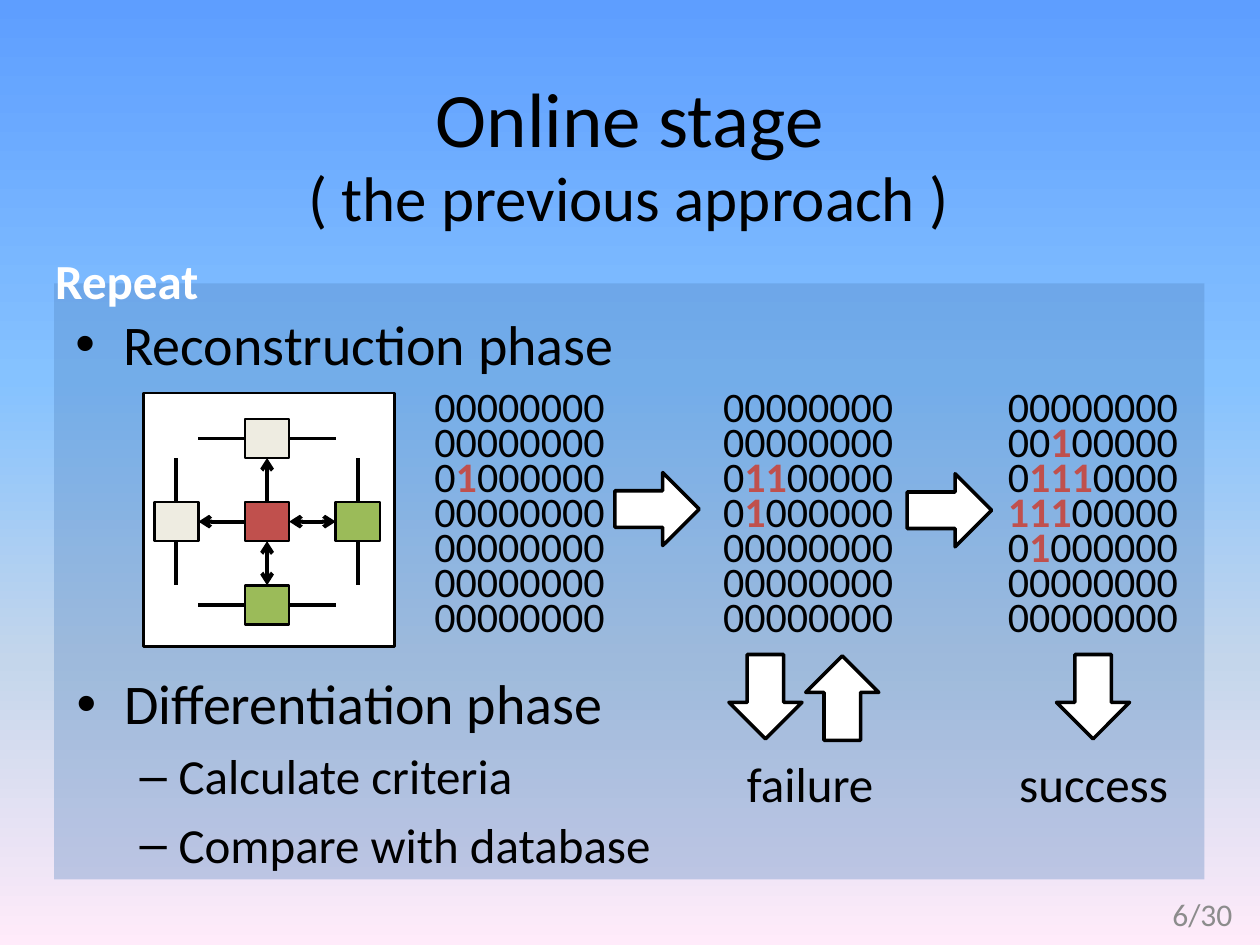
from copy import deepcopy
from itertools import groupby

from pptx import Presentation
from pptx.dml.color import RGBColor
from pptx.enum.shapes import MSO_CONNECTOR, MSO_SHAPE
from pptx.enum.text import MSO_ANCHOR, PP_ALIGN
from pptx.oxml.ns import qn
from pptx.oxml.xmlchemy import OxmlElement
from pptx.util import Inches, Pt

FONT = "Calibri"
BLACK = RGBColor(0x00, 0x00, 0x00)
WHITE = RGBColor(0xFF, 0xFF, 0xFF)
GRAY = RGBColor(0x8C, 0x8C, 0x8C)
RED = RGBColor(0xC0, 0x50, 0x4D)
GREEN = RGBColor(0x9B, 0xBB, 0x59)
CREAM = RGBColor(0xEE, 0xEC, 0xE1)
PANEL_BLUE = RGBColor(0x4F, 0x81, 0xBD)
SKY = [(0, RGBColor(0x5E, 0x9E, 0xFF)), (0.4, RGBColor(0x85, 0xC2, 0xFF)),
       (0.7, RGBColor(0xC4, 0xD6, 0xEB)), (1, RGBColor(0xFF, 0xEB, 0xFA))]


def add_child(parent, tag, **attributes):
    element = OxmlElement(tag)
    for name, value in attributes.items():
        element.set(name, str(value))
    parent.append(element)
    return element


def add_run(paragraph, text, size, color=BLACK, bold=False):
    run = paragraph.add_run()
    run.text = text
    run.font.name = FONT
    run.font.size = Pt(size)
    run.font.bold = bold
    run.font.color.rgb = color


def add_text_frame(slide, box, anchor=MSO_ANCHOR.TOP):
    frame = slide.shapes.add_textbox(*map(Inches, box)).text_frame
    frame.word_wrap = True
    frame.vertical_anchor = anchor
    return frame


def add_label(slide, box, text, size, color=BLACK, bold=False,
              align=PP_ALIGN.LEFT, anchor=MSO_ANCHOR.TOP):
    paragraph = add_text_frame(slide, box, anchor).paragraphs[0]
    paragraph.alignment = align
    add_run(paragraph, text, size, color, bold)


def add_box(shapes, kind, box, fill, line_width=None):
    shape = shapes.add_shape(kind, *map(Inches, box))
    shape.shadow.inherit = False
    shape.fill.solid()
    shape.fill.fore_color.rgb = fill
    if line_width:
        shape.line.color.rgb = BLACK
        shape.line.width = Pt(line_width)
    else:
        shape.line.fill.background()
    return shape


def add_line(shapes, start, end, heads=()):
    line = shapes.add_connector(MSO_CONNECTOR.STRAIGHT,
                                *map(Inches, (*start, *end)))
    line.line.color.rgb = BLACK
    line.line.width = Pt(2.25)
    for head in heads:
        add_child(line.line._get_or_add_ln(), head, type="arrow")
    add_child(line._element.spPr, "a:effectLst")


def paint_background(slide):
    fill = slide.background.fill
    fill.gradient()
    fill.gradient_angle = 270
    stop_list = slide.element.find(".//" + qn("a:gsLst"))
    for _ in range(len(SKY) - len(stop_list)):
        stop_list.append(deepcopy(stop_list[0]))
    for stop, (position, color) in zip(fill.gradient_stops, SKY):
        stop.position = position
        stop.color.rgb = color


def add_heading(slide, title_box, subtitle_box):
    title = slide.shapes.title
    title.left, title.top, title.width, title.height = map(Inches, title_box)
    title.text_frame.vertical_anchor = MSO_ANCHOR.MIDDLE
    paragraph = title.text_frame.paragraphs[0]
    paragraph.alignment = PP_ALIGN.CENTER
    add_run(paragraph, "Online stage", 44)
    add_label(slide, subtitle_box, "( the previous approach )", 36,
              align=PP_ALIGN.CENTER, anchor=MSO_ANCHOR.MIDDLE)


def add_panel(slide, box):
    panel = add_box(slide.shapes, MSO_SHAPE.RECTANGLE, box, PANEL_BLUE)
    color = panel._element.spPr.find(".//" + qn("a:srgbClr"))
    add_child(color, "a:alpha", val=32000)


def add_bullets(slide, box, items):
    """Each item is a (level, text) pair."""
    styles = [("•", 32, 0.38, 0.38), ("–", 28, 0.81, 0.31)]
    frame = add_text_frame(slide, box)
    for index, (level, text) in enumerate(items):
        mark, size, margin, hanging = styles[level]
        paragraph = frame.add_paragraph() if index else frame.paragraphs[0]
        paragraph.level = level
        paragraph.space_before = Pt(size * 0.2)
        properties = paragraph._p.get_or_add_pPr()
        properties.set("marL", str(Inches(margin)))
        properties.set("indent", str(-Inches(hanging)))
        add_child(properties, "a:buFont", typeface="Arial")
        add_child(properties, "a:buChar", char=mark)
        add_run(paragraph, text, size)


def add_cell_diagram(slide, box):
    shapes = slide.shapes.add_group_shape().shapes
    add_box(shapes, MSO_SHAPE.RECTANGLE, box, WHITE, 1.5)
    center_x, center_y = box[0] + 0.98, box[1] + 1.02
    half_width, half_height = 0.175, 0.155
    link_x, link_y = 0.37, 0.35
    step_x, step_y = 2 * half_width + link_x, 2 * half_height + link_y

    def add_cell(x, y, fill):
        add_box(shapes, MSO_SHAPE.RECTANGLE,
                (x - half_width, y - half_height, 2 * half_width, 2 * half_height),
                fill, 1.5)

    def add_link(x, y, dx, dy, heads=()):
        start = x + dx * half_width, y + dy * half_height
        end = start[0] + dx * link_x, start[1] + dy * link_y
        add_line(shapes, start, end, heads)

    add_cell(center_x, center_y, RED)
    one_way, two_way = ("a:tailEnd",), ("a:headEnd", "a:tailEnd")
    for dx, dy, fill, heads in [(1, 0, GREEN, two_way), (-1, 0, CREAM, one_way),
                                (0, -1, CREAM, one_way), (0, 1, GREEN, two_way)]:
        x, y = center_x + dx * step_x, center_y + dy * step_y
        add_cell(x, y, fill)
        add_link(center_x, center_y, dx, dy, heads)
        # Open links at right angles to the arrow
        for side in (-1, 1):
            add_link(x, y, side * dy, side * dx)


def add_bit_grid(slide, box, rows):
    frame = add_text_frame(slide, box)
    for index, row in enumerate(rows):
        paragraph = frame.add_paragraph() if index else frame.paragraphs[0]
        paragraph.line_spacing = Pt(20)
        for bit, bits in groupby(row):
            marked = bit == "1"
            add_run(paragraph, "".join(bits), 24, RED if marked else BLACK, marked)


def add_flow(slide, grid_top):
    zeros = "00000000"
    grids = [
        (3.35, [zeros, zeros, "01000000"] + [zeros] * 4),
        (5.64, [zeros, zeros, "01100000", "01000000"] + [zeros] * 3),
        (7.9, [zeros, "00100000", "01110000", "11100000", "01000000", zeros, zeros]),
    ]
    for left, rows in grids:
        add_bit_grid(slide, (left, grid_top, 1.73, 2.06), rows)
    for left, top, rotation in [(4.88, 3.75, 0), (7.2, 3.76, 0), (5.74, 5.24, 90),
                                (6.35, 5.25, 270), (8.34, 5.24, 90)]:
        arrow = add_box(slide.shapes, MSO_SHAPE.RIGHT_ARROW,
                        (left, top, 0.67, 0.58), WHITE, 2)
        arrow.rotation = rotation
    add_label(slide, (5.83, 5.93, 1.21, 0.57), "failure", 28)
    add_label(slide, (7.99, 5.93, 1.45, 0.57), "success", 28)


def main():
    presentation = Presentation()
    presentation.slide_width, presentation.slide_height = Inches(10), Inches(7.5)
    slide = presentation.slides.add_slide(presentation.slide_layouts[5])
    paint_background(slide)
    add_heading(slide, (0.5, 0.3, 9, 1.25), (0.49, 0.93, 9, 1.25))
    # Repeated phases
    add_panel(slide, (0.43, 2.25, 9.13, 4.73))
    add_label(slide, (0.34, 1.94, 1.67, 0.57), "Repeat", 28, WHITE, True)
    add_bullets(slide, (0.5, 2.41, 9, 0.63), [(0, "Reconstruction phase")])
    add_cell_diagram(slide, (1.14, 3.12, 1.99, 2.01))
    add_bullets(slide, (0.51, 5.26, 9, 1.72),
                [(0, "Differentiation phase"), (1, "Calculate criteria"),
                 (1, "Compare with database")])
    add_flow(slide, 3.09)
    # Page number
    add_label(slide, (7.55, 7.05, 2.33, 0.4), "6/30", 18, GRAY,
              align=PP_ALIGN.RIGHT, anchor=MSO_ANCHOR.MIDDLE)
    presentation.save("out.pptx")


if __name__ == "__main__":
    main()
